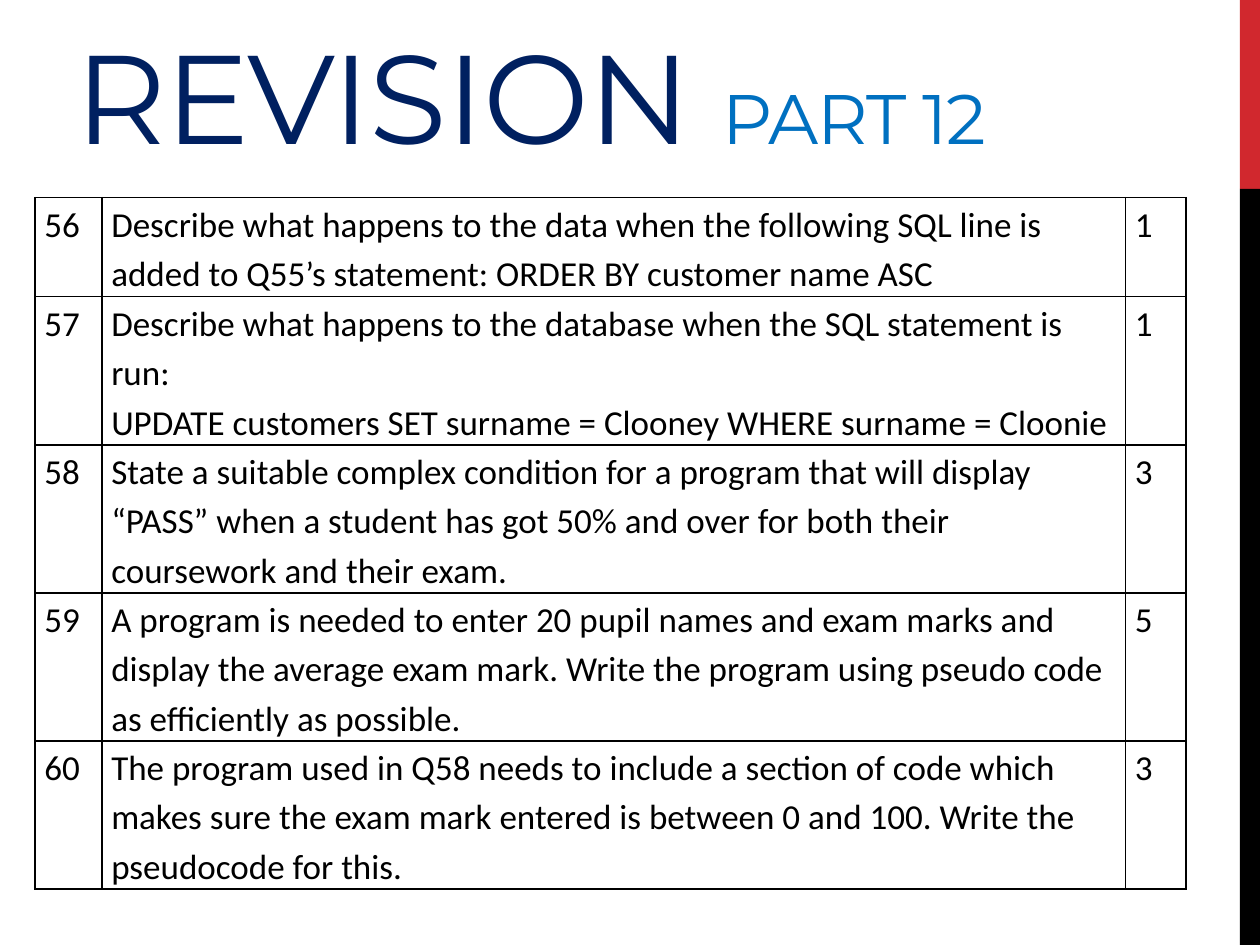
from dataclasses import dataclass

from lxml.etree import SubElement
from pptx import Presentation
from pptx.dml.color import RGBColor
from pptx.enum.shapes import MSO_SHAPE
from pptx.enum.text import MSO_ANCHOR, MSO_AUTO_SIZE, PP_ALIGN
from pptx.oxml.ns import qn
from pptx.util import Pt

BLACK = "000000"
COLS = (38.2, 584.9, 34.7)


@dataclass
class Bar:
    top: float
    height: float
    color: str


@dataclass
class Row:
    num: int
    text: str
    marks: int
    height: float = 84.6


@dataclass
class Part:
    text: str
    size: float
    color: str


BARS = (Bar(0, 108, "D1282E"), Bar(108, 432, BLACK))
PARTS = (Part("REVISION ", 72, "002060"), Part("PART 12", 40, "0070C0"))
ROWS = (
    Row(56, "Describe what happens to the data when the following SQL line is "
        "added to Q55’s statement: ORDER BY customer name ASC", 1, 56.6),
    Row(57, "Describe what happens to the database when the SQL statement is run:\n"
        "UPDATE customers SET surname = Clooney WHERE surname = Cloonie", 1),
    Row(58, "State a suitable complex condition for a program that will display "
        "“PASS” when a student has got 50% and over for both their "
        "coursework and their exam.", 3),
    Row(59, "A program is needed to enter 20 pupil names and exam marks and "
        "display the average exam mark. Write the program using pseudo code "
        "as efficiently as possible.", 5),
    Row(60, "The program used in Q58 needs to include a section of code which "
        "makes sure the exam mark entered is between 0 and 100. Write the "
        "pseudocode for this.", 3),
)


def rgb(color: str) -> RGBColor:
    return RGBColor.from_string(color)


def draw_bar(slide, bar: Bar) -> None:
    shape = slide.shapes.add_shape(
        MSO_SHAPE.RECTANGLE, Pt(708.5), Pt(bar.top), Pt(11.5), Pt(bar.height))
    shape.shadow.inherit = False
    shape.fill.solid()
    shape.fill.fore_color.rgb = rgb(bar.color)
    shape.line.fill.background()


def draw_title(slide) -> None:
    title = slide.shapes.title
    title.left, title.top = Pt(36), Pt(3.6)
    title.width, title.height = Pt(618.5), Pt(93.6)
    frame = title.text_frame
    frame.auto_size = MSO_AUTO_SIZE.NONE
    frame.vertical_anchor = MSO_ANCHOR.BOTTOM
    frame.margin_top = frame.margin_bottom = 0
    para = frame.paragraphs[0]
    para.alignment = PP_ALIGN.LEFT
    para.font.name = "Montserrat"
    for part in PARTS:
        run = para.add_run()
        run.text = part.text
        run.font.name = "Montserrat"
        run.font.size = Pt(part.size)
        run.font.color.rgb = rgb(part.color)
        run.font._element.set("spc", "-60")


def add_edges(cell) -> None:
    props = cell._tc.get_or_add_tcPr()
    for index, side in enumerate("LRTB"):
        line = SubElement(props, qn(f"a:ln{side}"), w=str(Pt(1)))
        fill = SubElement(line, qn("a:solidFill"))
        SubElement(fill, qn("a:srgbClr"), val=BLACK)
        props.insert(index, line)


def fill_cell(cell, text: str) -> None:
    cell.margin_left = cell.margin_right = Pt(5.4)
    cell.margin_top = cell.margin_bottom = 0
    cell.fill.background()
    cell.text = text
    for para in cell.text_frame.paragraphs:
        para.line_spacing = 1.15
        for font in (para.font, para.runs[0].font):
            font.name = "Calibri"
            font.size = Pt(20)
            font.color.rgb = rgb(BLACK)
    add_edges(cell)


def draw_table(slide) -> None:
    height = sum(row.height for row in ROWS)
    table = slide.shapes.add_table(
        len(ROWS), len(COLS), Pt(20), Pt(113), Pt(sum(COLS)), Pt(height)).table
    table.first_row = table.horz_banding = False
    for col, width in zip(table.columns, COLS):
        col.width = Pt(width)
    for line, row in zip(table.rows, ROWS):
        line.height = Pt(row.height)
        for cell, text in zip(line.cells, (row.num, row.text, row.marks)):
            fill_cell(cell, str(text))


def main() -> None:
    deck = Presentation()
    deck.slide_width, deck.slide_height = Pt(720), Pt(540)
    slide = deck.slides.add_slide(deck.slide_layouts[5])
    for bar in BARS:
        draw_bar(slide, bar)
    draw_title(slide)
    draw_table(slide)
    deck.save("out.pptx")


if __name__ == "__main__":
    main()
